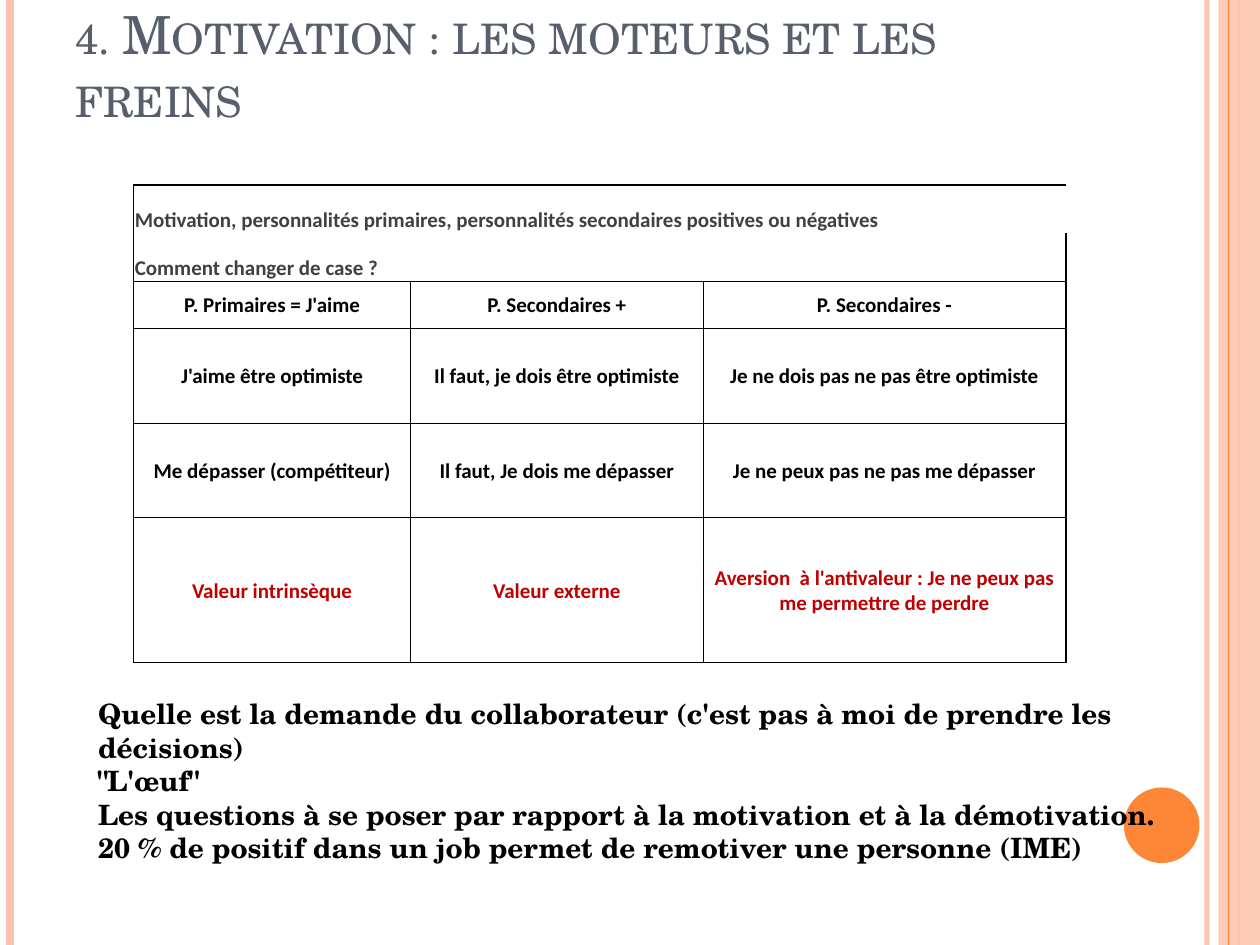
from lxml import etree
from pptx import Presentation
from pptx.dml.color import RGBColor
from pptx.enum.shapes import MSO_CONNECTOR, MSO_SHAPE
from pptx.enum.text import MSO_ANCHOR, PP_ALIGN
from pptx.oxml.ns import qn
from pptx.util import Inches, Pt

STRAIGHT = MSO_CONNECTOR.STRAIGHT
BOTTOM, MIDDLE = MSO_ANCHOR.BOTTOM, MSO_ANCHOR.MIDDLE
LEFT, CENTER = PP_ALIGN.LEFT, PP_ALIGN.CENTER
PEACH = RGBColor(0xFE, 0xC3, 0xAE)
ORANGE = RGBColor(0xFE, 0x86, 0x37)
SLATE = RGBColor(0x57, 0x5F, 0x6D)
GREY = RGBColor(0x40, 0x40, 0x40)
BLACK = RGBColor(0, 0, 0)
RED = RGBColor(0xC0, 0, 0)
SERIF, SANS = "TeX Gyre Schola", "Calibri"


def set_opacity(shape, percent):
    color = shape._element.spPr.find(".//" + qn("a:srgbClr"))
    etree.SubElement(color, qn("a:alpha")).set("val", str(percent * 1000))


def set_borders(cell, widths):
    """Widths in points, ordered left, right, top, bottom; 0 means no line."""
    tcPr = cell._tc.get_or_add_tcPr()
    for i, (side, width) in enumerate(zip("LRTB", widths)):
        ln = etree.Element(qn("a:ln" + side), w=str(Pt(width)))
        if width:
            fill = etree.SubElement(ln, qn("a:solidFill"))
            etree.SubElement(fill, qn("a:srgbClr"), val=str(BLACK))
        else:
            etree.SubElement(ln, qn("a:noFill"))
        tcPr.insert(i, ln)


prs = Presentation()
prs.slide_width, prs.slide_height = Inches(10), Inches(7.5)
s = prs.slides.add_slide(prs.slide_layouts[5])

# Side band
band = s.shapes.add_shape(MSO_SHAPE.RECTANGLE, Inches(9.67), 0, Inches(0.33), Inches(7.5))
band.shadow.inherit = False
band.fill.solid()
band.fill.fore_color.rgb = PEACH
band.line.fill.background()
set_opacity(band, 87)

# Vertical stripes
for x, width, color, opacity in [
    (9.58, 3, PEACH, 93),
    (0.08, 4.5, PEACH, 100),
    (9.83, 1.5, PEACH, 100),
    (9.75, 0.75, ORANGE, 100),
]:
    line = s.shapes.add_connector(STRAIGHT, Inches(x), 0, Inches(x), Inches(7.5))
    line.line.color.rgb = color
    line.line.width = Pt(width)
    etree.SubElement(line._element.spPr, qn("a:effectLst"))
    if opacity < 100:
        set_opacity(line, opacity)

# Page dot
dot = s.shapes.add_shape(MSO_SHAPE.OVAL, Inches(8.92), Inches(6.25), Inches(0.6), Inches(0.6))
dot.shadow.inherit = False
dot.fill.solid()
dot.fill.fore_color.rgb = ORANGE
dot.line.fill.background()

# Title
title = s.shapes.title
title.left, title.top = Inches(0.5), Inches(0.3)
title.width, title.height = Inches(8.17), Inches(0.77)
tf = title.text_frame
tf.text = "4. Motivation : les moteurs et les freins"
tf.vertical_anchor = BOTTOM
tf.word_wrap = True
p = tf.paragraphs[0]
p.alignment = LEFT
font = p.runs[0].font
font.name, font.size, font.color.rgb = SERIF, Pt(30), SLATE
font._element.set("cap", "small")

# Table: two merged heading rows, then the three personality columns
rows = [
    ["Motivation, personnalités primaires, personnalités secondaires positives ou négatives", "", ""],
    ["Comment changer de case ?", "", ""],
    ["P. Primaires = J'aime", "P. Secondaires +", "P. Secondaires -"],
    ["J'aime être optimiste", "Il faut, je dois être optimiste", "Je ne dois pas ne pas être optimiste"],
    ["Me dépasser (compétiteur)", "Il faut, Je dois me dépasser", "Je ne peux pas ne pas me dépasser"],
    ["Valeur intrinsèque", "Valeur externe",
     "Aversion  à l'antivaleur : Je ne peux pas me permettre de perdre"],
]
col_widths = [2.2, 2.32, 2.88]
row_heights = [0.38, 0.38, 0.38, 0.75, 0.75, 1.15]
table = s.shapes.add_table(len(rows), len(col_widths), Inches(1.06), Inches(1.47),
                           Inches(sum(col_widths)), Inches(sum(row_heights))).table
table.first_row = table.horz_banding = False
for col, width in zip(table.columns, col_widths):
    col.width = Inches(width)
for row, height in zip(table.rows, row_heights):
    row.height = Inches(height)
table.cell(0, 0).merge(table.cell(0, 2))
table.cell(1, 0).merge(table.cell(1, 1))

last_row, last_col = len(rows) - 1, len(col_widths) - 1
for i, texts in enumerate(rows):
    heading = i < 2
    color = GREY if heading else RED if i == last_row else BLACK
    inner = 0 if heading else 0.5
    for j, text in enumerate(texts):
        cell = table.cell(i, j)
        cell.fill.background()
        cell.margin_left = cell.margin_right = cell.margin_top = Inches(0.01)
        cell.margin_bottom = 0
        cell.vertical_anchor = BOTTOM if heading else MIDDLE
        set_borders(cell, [
            1 if j == 0 else inner,
            1 if j == last_col else inner,
            1 if i == 0 else 0 if i == 1 else 0.5,
            1 if i == last_row else 0 if i == 0 else 0.5,
        ])
        p = cell.text_frame.paragraphs[0]
        p.font.size = Pt(12)
        if text:
            p.text = text
            p.alignment = LEFT if heading else CENTER
            font = p.runs[0].font
            font.name, font.size, font.bold = SANS, Pt(12), True
            font.color.rgb = color

# Closing remarks
remarks = [
    "Quelle est la demande du collaborateur (c'est pas à moi de prendre les décisions)",
    "\"L'œuf\"",
    "Les questions à se poser par rapport à la motivation et à la démotivation.",
    "20 % de positif dans un job permet de remotiver une personne (IME)",
]
tf = s.shapes.add_textbox(Inches(0.68), Inches(5.48), Inches(8.9), Inches(1.18)).text_frame
tf.word_wrap = True
tf.text = "\n".join(remarks)
for p in tf.paragraphs:
    font = p.runs[0].font
    font.name, font.size, font.bold = SERIF, Pt(16), True
    font.color.rgb = BLACK

prs.save("out.pptx")
